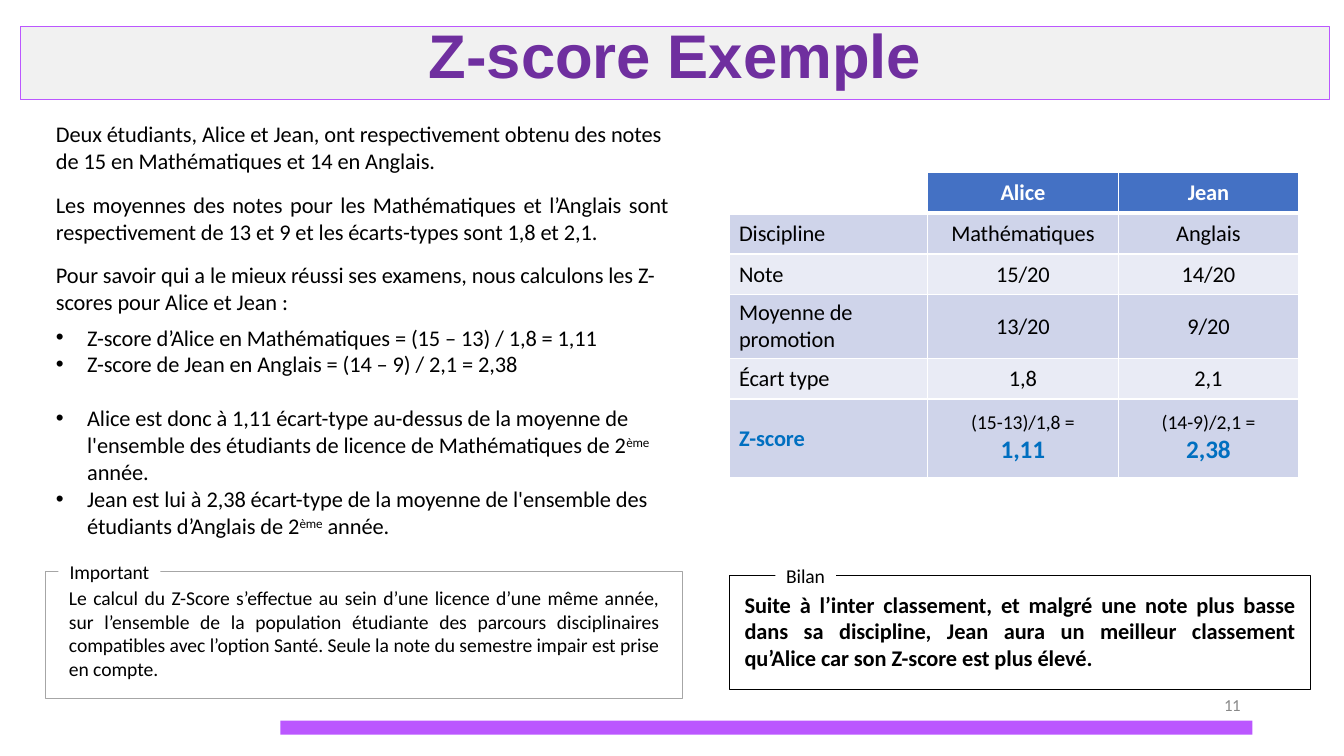
"""Build the "Z-score Exemple" slide: worked example, results table and two framed notes."""
import lxml.etree
import pptx
import pptx.dml.color
import pptx.enum.shapes
import pptx.enum.text
import pptx.oxml
import pptx.oxml.ns
import pptx.util

COLORS = {
    "accent": "BB57FF", "title": "6F2F9F", "band": "F1F1F1", "white": "FFFFFF", "black": "000000",
    "number": "888888", "frame": "A6A6A6", "header": "4471C4", "odd": "CFD4EA", "even": "E9EBF5",
    "score": "006FC0",
}
ALIGN = pptx.enum.text.PP_ALIGN
MIDDLE = pptx.enum.text.MSO_ANCHOR.MIDDLE
TOP = pptx.enum.text.MSO_ANCHOR.TOP
RGB = pptx.dml.color.RGBColor.from_string

deck = pptx.Presentation()
deck.slide_width = pptx.util.Inches(13.33)
deck.slide_height = pptx.util.Inches(7.5)
slide = deck.slides.add_slide(deck.slide_layouts[6])
percent_x, percent_y = deck.slide_width / 100, deck.slide_height / 100


def write(frame, text, *, size=16, color="black", bold=False, font="Calibri", align=ALIGN.LEFT,
          before=0, line=None, spacing=-5, bullet=False):
    """Add a paragraph to a text frame; text between carets is raised."""
    paragraph = frame.paragraphs[0] if not frame.text else frame.add_paragraph()
    paragraph.alignment = align
    paragraph.space_before = pptx.util.Pt(before)
    if line:
        paragraph.line_spacing = pptx.util.Pt(line)
    if bullet:
        properties = paragraph._p.get_or_add_pPr()
        properties.set("marL", str(pptx.util.Inches(0.31)))
        properties.set("indent", str(-pptx.util.Inches(0.31)))
        for tag, key, value in (("a:buFont", "typeface", "Arial"), ("a:buChar", "char", "•")):
            lxml.etree.SubElement(properties, pptx.oxml.ns.qn(tag)).set(key, value)
    for index, piece in enumerate(text.split("^")):
        run = paragraph.add_run()
        run.text = piece
        run.font.name = font
        run.font.size = pptx.util.Pt(size)
        run.font.bold = bold
        run.font.color.rgb = RGB(COLORS[color])
        run._r.get_or_add_rPr().set("spc", str(spacing))
        if index % 2:
            run._r.get_or_add_rPr().set("baseline", "26000")


def panel(left, top, width, height, *, fill=None, outline=None, weight=0.75, pad=(0, 0), anchor=TOP):
    """Draw a rectangle placed in percent of the slide and return its text frame."""
    shape = slide.shapes.add_shape(
        pptx.enum.shapes.MSO_SHAPE.RECTANGLE, round(left * percent_x), round(top * percent_y),
        round(width * percent_x), round(height * percent_y))
    shape.shadow.inherit = False
    if fill:
        shape.fill.solid()
        shape.fill.fore_color.rgb = RGB(COLORS[fill])
    else:
        shape.fill.background()
    if outline:
        shape.line.color.rgb = RGB(COLORS[outline])
        shape.line.width = pptx.util.Pt(weight)
    else:
        shape.line.fill.background()
    frame = shape.text_frame
    frame.word_wrap = True
    frame.vertical_anchor = anchor
    frame.margin_left = frame.margin_right = round(pad[0] * percent_x)
    frame.margin_top = frame.margin_bottom = round(pad[1] * percent_y)
    return frame


panel(20.86, 95.33, 72.32, 1.87, fill="accent")
heading = panel(1.5, 3.47, 97.45, 9.73, fill="band", outline="accent")
write(heading, "Z-score Exemple", size=44, color="title", bold=True, font="Arial",
      align=ALIGN.CENTER, line=46.3)
write(panel(91.07, 91.9, 2, 3.07), "11", size=12, color="number", spacing=-20)

example = slide.shapes.add_textbox(
    round(4.16 * percent_x), round(15.75 * percent_y),
    round(45.6 * percent_x), round(55.7 * percent_y)).text_frame
example.word_wrap = True
example.margin_left = example.margin_right = example.margin_bottom = 0
example.margin_top = round(0.2 * percent_y)
write(example, "Deux étudiants, Alice et Jean, ont respectivement obtenu des notes de 15 en "
      "Mathématiques et 14 en Anglais.")
write(example, "Les moyennes des notes pour les Mathématiques et l’Anglais sont respectivement "
      "de 13 et 9 et les écarts-types sont 1,8 et 2,1.", before=12, align=ALIGN.JUSTIFY)
write(example, "Pour savoir qui a le mieux réussi ses examens, nous calculons les Z-scores "
      "pour Alice et Jean :", before=12)
for step, gap in (
    ("Z-score d’Alice en Mathématiques = (15 – 13) / 1,8 = 1,11", 6),
    ("Z-score de Jean en Anglais = (14 – 9) / 2,1 = 2,38", 0),
    ("Alice est donc à 1,11 écart-type au-dessus de la moyenne de l'ensemble des étudiants "
     "de licence de Mathématiques de 2^ème^ année.", 19.2),
    ("Jean est lui à 2,38 écart-type de la moyenne de l'ensemble des étudiants d’Anglais "
     "de 2^ème^ année.", 0),
):
    write(example, step, before=gap, bullet=True)

important = panel(3.38, 75.6, 47.4, 16.8, outline="frame", weight=1, pad=(1.75, 1.95))
write(important, "Le calcul du Z-Score s’effectue au sein d’une licence d’une même année, sur "
      "l’ensemble de la population étudiante des parcours disciplinaires compatibles avec "
      "l’option Santé. Seule la note du semestre impair est prise en compte.",
      size=14, align=ALIGN.JUSTIFY)
summary = panel(54.3, 76.13, 43.2, 15.07, outline="black", pad=(1.1, 2))
write(summary, "Suite à l’inter classement, et malgré une note plus basse dans sa discipline, "
      "Jean aura un meilleur classement qu’Alice car son Z-score est plus élevé.",
      bold=True, align=ALIGN.JUSTIFY)
for caption, left, top, width in (("Important", 4.35, 73.33, 7.58), ("Bilan", 57.69, 73.87, 4.5)):
    write(panel(left, top, width, 4.5, fill="white", anchor=MIDDLE), caption, size=14,
          align=ALIGN.CENTER, spacing=-10)

results = (
    ("", "Alice", "Jean"),
    ("Discipline", "Mathématiques", "Anglais"),
    ("Note", "15/20", "14/20"),
    ("Moyenne de promotion", "13/20", "9/20"),
    ("Écart type", "1,8", "2,1"),
    ("Z-score", "(15-13)/1,8 =|1,11", "(14-9)/2,1 =|2,38"),
)
column_shares = (14.78, 14.18, 13.43)
row_shares = (5.4, 5.4, 5.4, 8.4, 5.4, 10.4)
scores = slide.shapes.add_table(
    len(row_shares), len(column_shares), round(54.24 * percent_x), round(22.8 * percent_y),
    round(sum(column_shares) * percent_x), round(sum(row_shares) * percent_y)).table
scores.horz_banding = False
for column, share in zip(scores.columns, column_shares):
    column.width = round(share * percent_x)
for row, share in zip(scores.rows, row_shares):
    row.height = round(share * percent_y)

for r, entries in enumerate(results):
    for c, entry in enumerate(entries):
        cell = scores.cell(r, c)
        cell.vertical_anchor = MIDDLE
        cell.margin_left = pptx.util.Inches(0 if c else 0.1)
        cell.margin_right = cell.margin_top = cell.margin_bottom = 0
        for side in "LRTB":
            thick = (r, side) in ((0, "B"), (1, "T"))
            cell._tc.get_or_add_tcPr().append(pptx.oxml.parse_xml(
                f'<a:ln{side} {pptx.oxml.ns.nsdecls("a")} w="{pptx.util.Pt(3 if thick else 1)}">'
                f'<a:solidFill><a:srgbClr val="{COLORS["white"]}"/></a:solidFill></a:ln{side}>'))
        if not entry:
            cell.fill.background()
            continue
        cell.fill.solid()
        cell.fill.fore_color.rgb = RGB(COLORS["header" if r == 0 else "odd" if r % 2 else "even"])
        align = ALIGN.CENTER if c else ALIGN.LEFT
        if "|" in entry:
            formula, score = entry.split("|")
            write(cell.text_frame, formula, size=14, align=align, line=16.6)
            write(cell.text_frame, score, size=18, color="score", bold=True, align=align, line=21.4)
        else:
            color = "white" if r == 0 else "score" if entry == "Z-score" else "black"
            write(cell.text_frame, entry, color=color, bold=color != "black", align=align)

deck.save("out.pptx")
